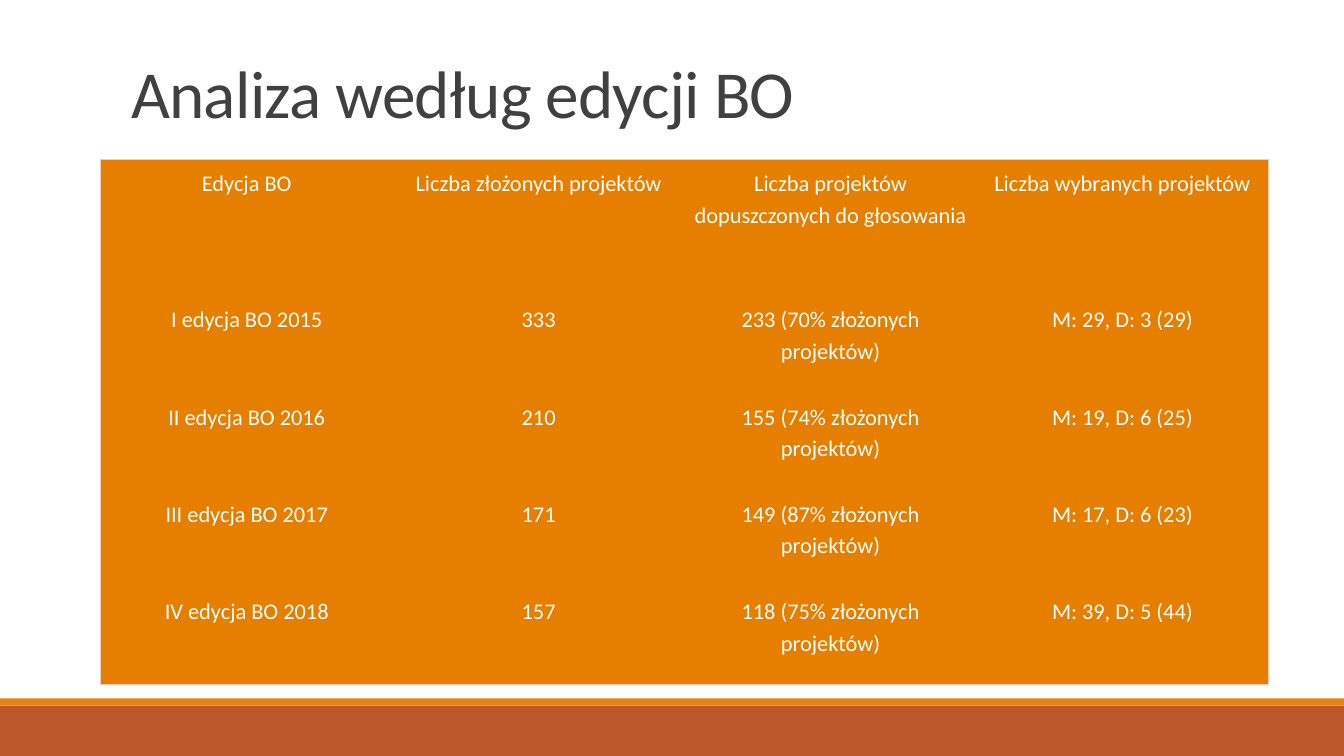
from dataclasses import dataclass

from lxml import etree
from pptx import Presentation
from pptx import util as u
from pptx.dml.color import RGBColor
from pptx.enum import shapes, text
from pptx.oxml import ns


@dataclass(frozen=True)
class Theme:
    font: str = "Calibri"
    title_size: int = 48
    cell_size: int = 16
    title_color: str = "404040"
    cell_color: str = "FFFFFF"
    cell_fill: str = "E67E00"
    border: str = "F2CDBD"
    band: str = "BD582C"
    stripe: str = "E48312"
    plain_table: str = "{2D5ABB26-0587-4C30-8999-92F81FD0307C}"


HEADER = ["Edycja BO", "Liczba złożonych projektów",
          "Liczba projektów dopuszczonych do głosowania",
          "Liczba wybranych projektów"]
EDITIONS = [
    ["I edycja BO 2015", "333", "233 (70% złożonych projektów)", "M: 29, D: 3 (29)"],
    ["II edycja BO 2016", "210", "155 (74% złożonych projektów)", "M: 19, D: 6 (25)"],
    ["III edycja BO 2017", "171", "149 (87% złożonych projektów)", "M: 17, D: 6 (23)"],
    ["IV edycja BO 2018", "157", "118 (75% złożonych projektów)", "M: 39, D: 5 (44)"],
]


def apply(target, formats):
    for name, value in formats.items():
        setattr(target, name, value)


class SlideBuilder:
    def __init__(self, page, theme):
        self.page = page
        self.theme = theme

    def add_words(self, para, words, size, color, **formats):
        apply(para, formats)
        span = para.add_run()
        span.text = words
        apply(span.font, {"name": self.theme.font, "size": u.Pt(size), "bold": False})
        span.font.color.rgb = RGBColor.from_string(color)
        return span

    def title(self, words, left, top, width, height):
        box = self.page.shapes.title
        apply(box, {"left": u.Inches(left), "top": u.Inches(top),
                    "width": u.Inches(width), "height": u.Inches(height)})
        apply(box.text_frame, {"vertical_anchor": text.MSO_ANCHOR.BOTTOM,
                               "auto_size": text.MSO_AUTO_SIZE.NONE,
                               "word_wrap": True})
        span = self.add_words(box.text_frame.paragraphs[0], words, self.theme.title_size,
                              self.theme.title_color, line_spacing=0.85,
                              alignment=text.PP_ALIGN.LEFT)
        span.font._element.set("spc", "-50")

    def bar(self, top, height, color):
        """Draw a borderless bar across the whole slide."""
        bar = self.page.shapes.add_shape(
            shapes.MSO_SHAPE.RECTANGLE, 0, u.Inches(top), u.Inches(13.33), u.Inches(height))
        bar.shadow.inherit = False
        bar.fill.solid()
        bar.fill.fore_color.rgb = RGBColor.from_string(color)
        bar.line.fill.background()

    def border(self, cell, side):
        line = etree.SubElement(cell._tc.get_or_add_tcPr(), ns.qn(f"a:ln{side}"),
                                w=str(u.Pt(1)))
        fill = etree.SubElement(line, ns.qn("a:solidFill"))
        etree.SubElement(fill, ns.qn("a:srgbClr"), val=self.theme.border)

    def table(self, rows, left, top, width, height, header_height):
        row_count, column_count = len(rows), len(rows[0])
        table = self.page.shapes.add_table(
            row_count, column_count, u.Inches(left), u.Inches(top),
            u.Inches(width), u.Inches(height)).table
        apply(table, {"first_row": False, "horz_banding": False})
        table._tbl.tblPr.find(ns.qn("a:tableStyleId")).text = self.theme.plain_table
        body_height = (height - header_height) / (row_count - 1)
        for r, values in enumerate(rows):
            table.rows[r].height = u.Inches(body_height if r else header_height)
            for c, words in enumerate(values):
                cell = table.cell(r, c)
                outer = {"L": c == 0, "R": c == column_count - 1,
                         "T": r == 0, "B": r == row_count - 1}
                for side, is_outer in outer.items():
                    if is_outer:
                        self.border(cell, side)
                cell.fill.solid()
                cell.fill.fore_color.rgb = RGBColor.from_string(self.theme.cell_fill)
                apply(cell, {f"margin_{side}": u.Inches(0.07)
                             for side in ("left", "top", "right", "bottom")})
                self.add_words(cell.text_frame.paragraphs[0], words, self.theme.cell_size,
                               self.theme.cell_color, line_spacing=1.15,
                               alignment=text.PP_ALIGN.CENTER)


def main():
    deck = Presentation()
    apply(deck, {"slide_width": u.Inches(13.33), "slide_height": u.Inches(7.5)})
    theme = Theme()
    slide = SlideBuilder(deck.slides.add_slide(deck.slide_layouts[5]), theme)
    slide.bar(7, 0.5, theme.band)
    slide.bar(6.93, 0.07, theme.stripe)
    slide.title("Analiza według edycji BO", 1.2, 0.38, 11, 0.98)
    slide.table([HEADER] + EDITIONS, 1, 1.58, 11.58, 5.21, header_height=1.35)
    deck.save("out.pptx")


if __name__ == "__main__":
    main()
